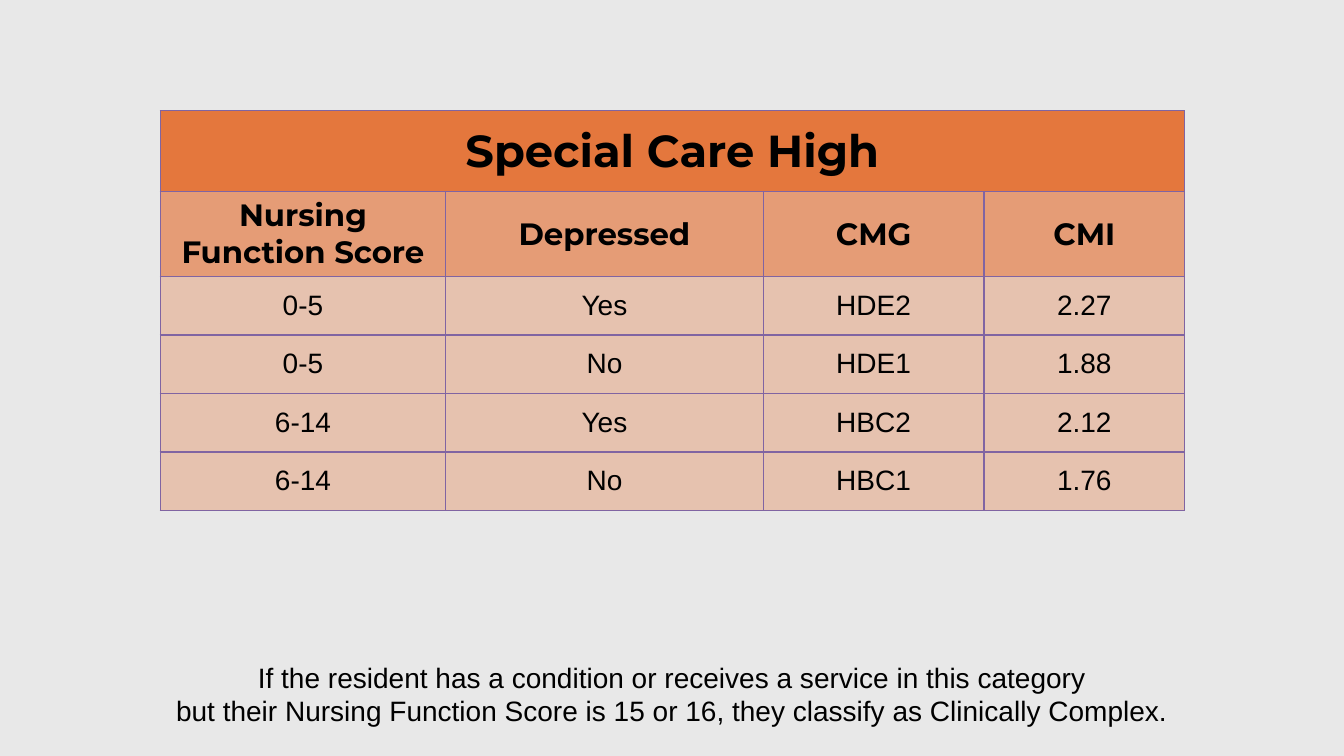
from lxml.etree import SubElement
from pptx import Presentation
from pptx.dml.color import RGBColor
from pptx.enum.text import MSO_ANCHOR, PP_ALIGN
from pptx.oxml.ns import qn
from pptx.util import Inches, Pt

TITLE = "Special Care High"
HEADINGS = ["Nursing\nFunction Score", "Depressed", "CMG", "CMI"]
SCORES = [
    ["0-5", "Yes", "HDE2", "2.27"],
    ["0-5", "No", "HDE1", "1.88"],
    ["6-14", "Yes", "HBC2", "2.12"],
    ["6-14", "No", "HBC1", "1.76"],
]
NOTE = (
    "If the resident has a condition or receives a service in this category\n"
    "but their Nursing Function Score is 15 or 16, they classify as Clinically Complex."
)

BACKGROUND = RGBColor(0xE8, 0xE8, 0xE8)
ORANGE = RGBColor(0xE3, 0x52, 0x05)
PURPLE = RGBColor(0x80, 0x64, 0xA2)
BLACK = RGBColor(0, 0, 0)

LEFT, TOP, WIDTH = 1.59, 1.1, 10.15
COLUMN_WIDTHS = [2.83, 3.15, 2.19, 1.99]
TITLE_HEIGHT, HEADING_HEIGHT, SCORE_HEIGHT = 0.8, 0.84, 0.58

TITLE_STYLE = ("Montserrat", 32, True, 75)
HEADING_STYLE = ("Montserrat", 22, True, 50)
SCORE_STYLE = ("Arial", 20, False, 25)


def write(frame, text, font_name, size, bold):
    frame.text = text
    for paragraph in frame.paragraphs:
        paragraph.alignment = PP_ALIGN.CENTER
        for run in paragraph.runs:
            run.font.name = font_name
            run.font.size = Pt(size)
            run.font.bold = bold
            run.font.color.rgb = BLACK


def style_cell(cell, opacity):
    cell.vertical_anchor = MSO_ANCHOR.MIDDLE
    properties = cell._tc.get_or_add_tcPr()
    for side in ("a:lnL", "a:lnR", "a:lnT", "a:lnB"):
        border = SubElement(properties, qn(side), w=str(Pt(1)))
        border_fill = SubElement(border, qn("a:solidFill"))
        SubElement(border_fill, qn("a:srgbClr"), val=str(PURPLE))
    cell.fill.solid()
    cell.fill.fore_color.rgb = ORANGE
    color = properties.find(qn("a:solidFill")).find(qn("a:srgbClr"))
    SubElement(color, qn("a:alpha"), val=str(opacity * 1000))


def add_score_table(slide):
    rows = [[TITLE, "", "", ""], HEADINGS, *SCORES]
    heights = [TITLE_HEIGHT, HEADING_HEIGHT] + [SCORE_HEIGHT] * len(SCORES)
    styles = [TITLE_STYLE, HEADING_STYLE] + [SCORE_STYLE] * len(SCORES)
    table = slide.shapes.add_table(
        len(rows), len(HEADINGS),
        Inches(LEFT), Inches(TOP), Inches(WIDTH), Inches(sum(heights)),
    ).table
    table.first_row = False
    table.horz_banding = False
    for column, width in zip(table.columns, COLUMN_WIDTHS):
        column.width = Inches(width)
    for row, height, texts, style in zip(table.rows, heights, rows, styles):
        row.height = Inches(height)
        font_name, size, bold, opacity = style
        for cell, text in zip(row.cells, texts):
            style_cell(cell, opacity)
            if text:
                write(cell.text_frame, text, font_name, size, bold)
    table.cell(0, 0).merge(table.cell(0, len(HEADINGS) - 1))


def add_note(slide):
    note = slide.shapes.add_textbox(Inches(LEFT), Inches(6.5), Inches(WIDTH), Inches(1))
    note.text_frame.word_wrap = True
    write(note.text_frame, NOTE, "Arial", 20, False)


def main():
    presentation = Presentation()
    presentation.slide_width = Inches(13.33)
    presentation.slide_height = Inches(7.5)
    slide = presentation.slides.add_slide(presentation.slide_layouts[6])
    slide.background.fill.solid()
    slide.background.fill.fore_color.rgb = BACKGROUND
    add_score_table(slide)
    add_note(slide)
    presentation.save("out.pptx")


if __name__ == "__main__":
    main()
